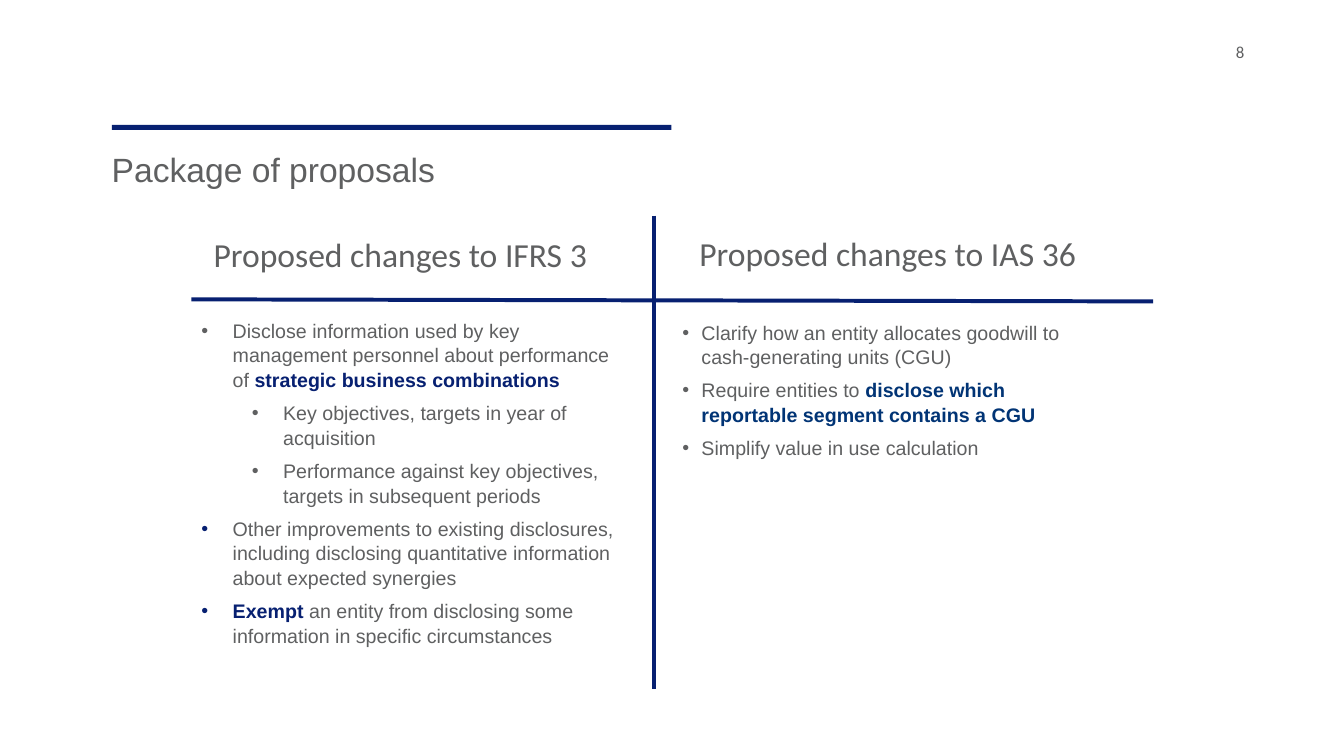
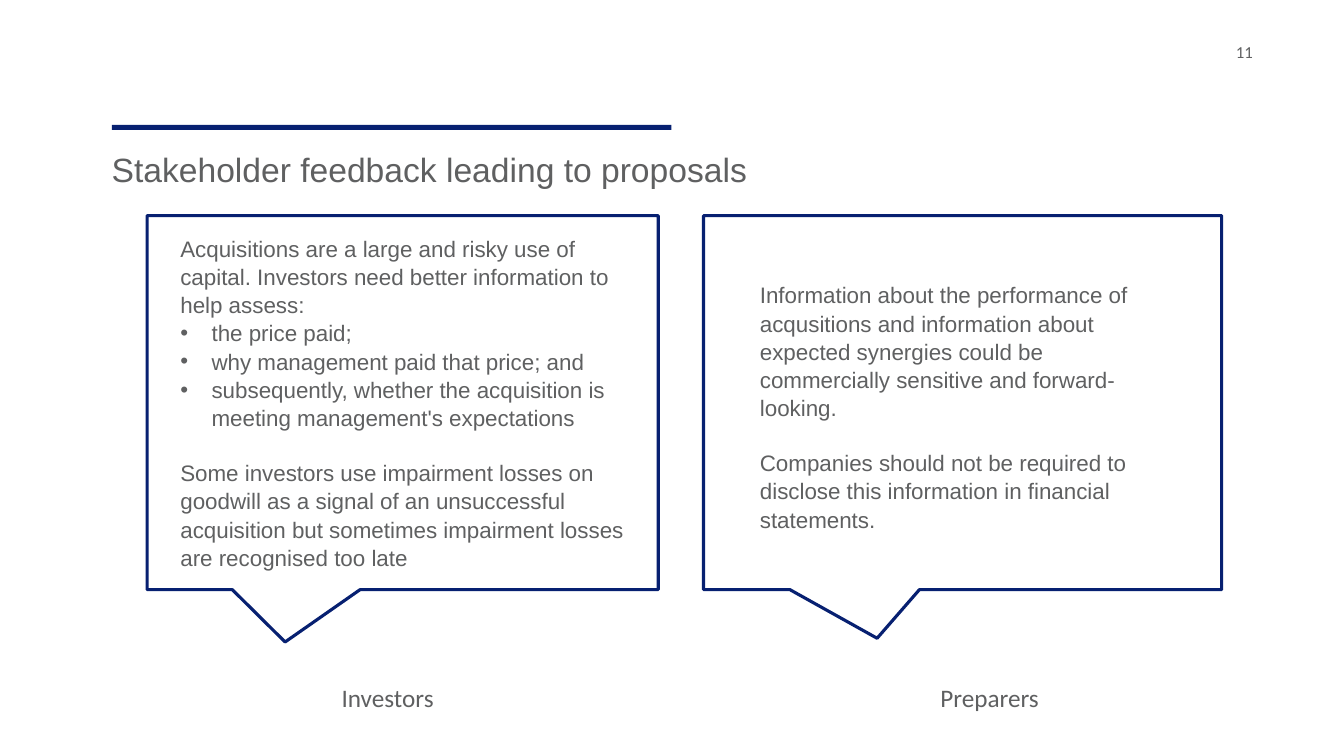
from dataclasses import dataclass

from lxml.etree import SubElement
from pptx import Presentation
from pptx.dml.color import RGBColor
from pptx.enum.shapes import MSO_CONNECTOR, MSO_SHAPE
from pptx.oxml.ns import qn
from pptx.util import Inches, Pt


@dataclass(frozen=True)
class Theme:
    navy: str = "072071"
    blue: str = "013475"
    grey: str = "5F6061"
    body_font: str = "Arial"
    label_font: str = "Calibri"
    title_size: int = 24
    label_size: int = 18
    quote_size: int = 16
    list_size: int = 14
    number_size: int = 12
    divider_width: float = 2.84
    callout_width: float = 2.25
    body_spacing: float = 1.05


@dataclass(frozen=True)
class Item:
    runs: tuple
    indent: float = 0
    hang: float = 0
    bullet_color: str = ""
    before: float = 0
    after: float = 0


theme = Theme()
presentation = Presentation()
presentation.slide_width = Inches(13.33)
presentation.slide_height = Inches(7.5)
COLUMN = presentation.slide_width / 100
ROW = presentation.slide_height / 100


def place(left, top, width, height):
    return [int(left * COLUMN), int(top * ROW), int(width * COLUMN), int(height * ROW)]


def add_text(slide, area, items, size, font, spacing=1.0, margin=None):
    frame = slide.shapes.add_textbox(*place(*area)).text_frame
    frame.word_wrap = True
    if margin is not None:
        frame.margin_left = frame.margin_right = margin
        frame.margin_top = frame.margin_bottom = margin
    for index, item in enumerate(items):
        paragraph = frame.paragraphs[0] if index == 0 else frame.add_paragraph()
        paragraph.line_spacing = spacing
        paragraph.space_before = Pt(item.before)
        paragraph.space_after = Pt(item.after)
        if item.hang:
            properties = paragraph._p.get_or_add_pPr()
            properties.set("marL", str(Inches(item.indent)))
            properties.set("indent", str(-Inches(item.hang)))
            if item.bullet_color:
                bullet_fill = SubElement(properties, qn("a:buClr"))
                SubElement(bullet_fill, qn("a:srgbClr"), val=item.bullet_color)
            SubElement(properties, qn("a:buFont"), typeface=theme.body_font)
            SubElement(properties, qn("a:buChar"), char="•")
        paragraph.font.size = Pt(size)
        paragraph.font.name = font
        paragraph.font.color.rgb = RGBColor.from_string(theme.grey)
        for text, accent in item.runs:
            run = paragraph.add_run()
            run.text = text
            if accent:
                run.font.bold = True
                run.font.color.rgb = RGBColor.from_string(accent)


slides = []
for number, title in (
    ("8", "Package of proposals"),
    ("11", "Stakeholder feedback leading to proposals"),
):
    slide = presentation.slides.add_slide(presentation.slide_layouts[6])
    title_rule = slide.shapes.add_shape(MSO_SHAPE.RECTANGLE, *place(8.33, 16.53, 41.63, 0.67))
    title_rule.shadow.inherit = False
    title_rule.fill.solid()
    title_rule.fill.fore_color.rgb = RGBColor.from_string(theme.navy)
    title_rule.line.fill.background()
    add_text(slide, (91.95, 5.47, 5.03, 3.87), [Item(((number, ""),))],
             theme.number_size, theme.label_font, margin=0)
    add_text(slide, (7.58, 19.07, 83.4, 11.2), [Item(((title, ""),))],
             theme.title_size, theme.body_font)
    slides.append(slide)

proposals, feedback = slides

for start_column, start_row, end_column, end_row in (
    (14.25, 39.6, 85.8, 39.87),
    (48.68, 28.53, 48.68, 91.2),
):
    divider = proposals.shapes.add_connector(
        MSO_CONNECTOR.STRAIGHT,
        int(start_column * COLUMN), int(start_row * ROW),
        int(end_column * COLUMN), int(end_row * ROW),
    )
    divider.line.color.rgb = RGBColor.from_string(theme.navy)
    divider.line.width = Pt(theme.divider_width)
    SubElement(divider._element.spPr, qn("a:effectLst"))

disclosure_items = [
    Item((("Disclose information used by key management personnel about performance of ", ""),
          ("strategic business combinations", theme.navy)), 0.31, 0.31, after=6),
    Item((("Key objectives, targets in year of acquisition", ""),), 0.81, 0.31, after=6),
    Item((("Performance against key objectives, targets in subsequent periods", ""),),
         0.81, 0.31, after=6),
    Item((("Other improvements to existing disclosures, including disclosing quantitative "
           "information about expected synergies", ""),), 0.31, 0.31, theme.navy, after=6),
    Item((("Exempt", theme.navy),
          (" an entity from disclosing some information in specific circumstances", "")),
         0.31, 0.31, theme.navy, after=6),
]
impairment_items = [
    Item((("Clarify how an entity allocates goodwill to cash-generating units (CGU)", ""),),
         0.19, 0.19, after=6),
    Item((("Require entities to ", ""),
          ("disclose which reportable segment contains a CGU", theme.blue)),
         0.19, 0.19, after=6),
    Item((("Simplify value in use calculation", ""),), 0.19, 0.19, after=6),
]
for heading, heading_area, items, list_area in (
    ("Proposed changes to IFRS 3", (15.15, 30.27, 30.9, 6.67),
     disclosure_items, (14.25, 41.33, 32.48, 43.47)),
    ("Proposed changes to IAS 36", (51.3, 30.13, 30.45, 6.67),
     impairment_items, (50.03, 41.6, 32.48, 19.33)),
):
    add_text(proposals, heading_area, [Item(((heading, ""),))],
             theme.title_size, theme.label_font)
    add_text(proposals, list_area, items, theme.list_size, theme.body_font, theme.body_spacing)

quote_gap = 19.3
investor_items = [
    Item((("Acquisitions are a large and risky use of capital. Investors need better "
           "information to help assess:", ""),)),
    Item((("the price paid;", ""),), 0.31, 0.31),
    Item((("why management paid that price; and", ""),), 0.31, 0.31),
    Item((("subsequently, whether the acquisition is meeting management's expectations", ""),),
         0.31, 0.31),
    Item((("Some investors use impairment losses on goodwill as a signal of an unsuccessful "
           "acquisition but sometimes impairment losses are recognised too late", ""),),
         before=quote_gap),
]
preparer_items = [
    Item((("Information about the performance of acqusitions and information about expected "
           "synergies could be commercially sensitive and forward-looking.", ""),)),
    Item((("Companies should not be required to disclose this information in financial "
           "statements.", ""),), before=quote_gap),
]
for group, label_left, callout_left, callout_width, pointer, items, quote_area in (
    ("Investors", 24.68, 10.95, 38.03, (-0.23, 0.64),
     investor_items, (12.68, 30.27, 36.3, 44.4)),
    ("Preparers", 69.23, 52.35, 38.55, (-0.165, 0.63),
     preparer_items, (55.8, 36.4, 31.73, 33.6)),
):
    callout = feedback.shapes.add_shape(
        MSO_SHAPE.RECTANGULAR_CALLOUT, *place(callout_left, 28.53, callout_width, 49.47))
    callout.shadow.inherit = False
    callout.adjustments[0], callout.adjustments[1] = pointer
    callout.fill.background()
    callout.line.color.rgb = RGBColor.from_string(theme.navy)
    callout.line.width = Pt(theme.callout_width)
    add_text(feedback, quote_area, items, theme.quote_size, theme.body_font, theme.body_spacing)
    add_text(feedback, (label_left, 89.6, 13.28, 5.33), [Item(((group, ""),))],
             theme.label_size, theme.label_font)

presentation.save("out.pptx")
